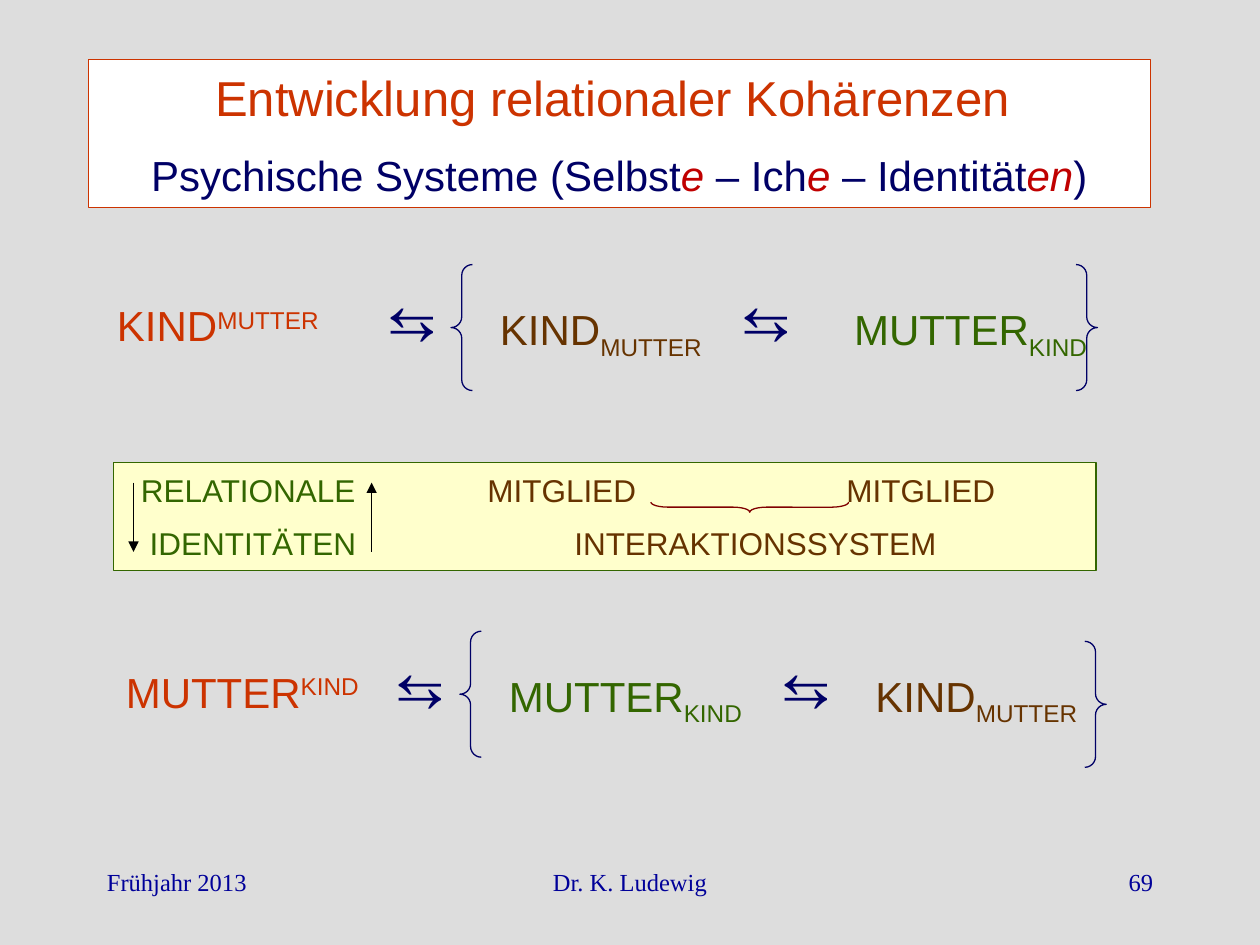
import pptx
import pptx.util
import pptx.dml.color
import pptx.enum.shapes
import pptx.enum.text
import pptx.oxml.ns
import lxml.etree

Inches, Pt = pptx.util.Inches, pptx.util.Pt
RGBColor = pptx.dml.color.RGBColor
SHAPE = pptx.enum.shapes.MSO_SHAPE
ALIGN = pptx.enum.text.PP_ALIGN
ANCHOR = pptx.enum.text.MSO_ANCHOR
qn = pptx.oxml.ns.qn

GREY = RGBColor(0xDD, 0xDD, 0xDD)
WHITE = RGBColor(0xFF, 0xFF, 0xFF)
CREAM = RGBColor(0xFF, 0xFF, 0xCC)
BLACK = RGBColor(0, 0, 0)
NAVY = RGBColor(0, 0, 0x66)
BLUE = RGBColor(0, 0, 0x99)
ORANGE = RGBColor(0xCC, 0x33, 0)
RED = RGBColor(0xC0, 0, 0)
MAROON = RGBColor(0x80, 0, 0)
BROWN = RGBColor(0x66, 0x33, 0)
GREEN = RGBColor(0x33, 0x66, 0)


def add_run(p, text, size, color, name="Arial", italic=False, base=0):
    """Append a formatted run; base is the raise in percent."""
    r = p.add_run()
    r.text = text
    for key, value in dict(size=Pt(size), name=name, italic=italic).items():
        setattr(r.font, key, value)
    r.font.color.rgb = color
    if base:
        r.font._element.set("baseline", str(base * 1000))


def set_tabs(p, stops):
    """Give a paragraph left tab stops, in inches."""
    tabs = lxml.etree.SubElement(p._p.get_or_add_pPr(), qn("a:tabLst"))
    for stop in stops:
        lxml.etree.SubElement(tabs, qn("a:tab"), pos=str(Inches(stop)), algn="l")


def add_text(s, left, top, width, height, anchor=ANCHOR.TOP):
    """Add a wrapping text box and return its first paragraph."""
    tf = s.shapes.add_textbox(*map(Inches, (left, top, width, height))).text_frame
    tf.word_wrap = True
    tf.vertical_anchor = anchor
    return tf.paragraphs[0]


def add_outline(s, kind, left, top, width, height, line, fill=None):
    """Add a thin-lined preset shape, filled or empty."""
    sp = s.shapes.add_shape(kind, *map(Inches, (left, top, width, height)))
    sp.shadow.inherit = False
    sp.line.color.rgb = line
    sp.line.width = Pt(0.75)
    if fill is None:
        sp.fill.background()
    else:
        sp.fill.solid()
        sp.fill.fore_color.rgb = fill
    return sp


def add_brace(s, kind, left, top, width, height, line, curl=0.5):
    """Add a brace with the given curl."""
    sp = add_outline(s, kind, left, top, width, height, line)
    sp.adjustments[0] = curl
    return sp


def add_arrow(s, x, start, end):
    """Add a vertical arrow from start to end."""
    c = s.shapes.add_connector(pptx.enum.shapes.MSO_CONNECTOR.STRAIGHT,
                               *map(Inches, (x, start, x, end)))
    c.line.color.rgb = BLACK
    c.line.width = Pt(0.75)
    lxml.etree.SubElement(c.line._get_or_add_ln(), qn("a:tailEnd"), type="triangle")
    lxml.etree.SubElement(c._element.spPr, qn("a:effectLst"))


def fill_box(sp, lines, align, gap):
    """Write lines of runs into a shape, with a gap between the lines."""
    tf = sp.text_frame
    tf.word_wrap = True
    tf.vertical_anchor = ANCHOR.MIDDLE
    for i, (runs, stops) in enumerate(lines):
        p = tf.add_paragraph() if i else tf.paragraphs[0]
        p.alignment = align
        p.space_before = Pt(gap if i else 0)
        if stops:
            set_tabs(p, stops)
        for run in runs:
            add_run(p, *run)


def build_title(s, left, top, width, height):
    """Draw the framed two-line title."""
    sp = add_outline(s, SHAPE.RECTANGLE, left, top, width, height, ORANGE, WHITE)
    subtitle = []
    for stem, ending in (("Psychische Systeme (Selbst", "e"), (" – Ich", "e"),
                         (" – Identität", "en")):
        subtitle += [(stem, 24, NAVY), (ending, 24, RED, "Arial", True)]
    subtitle.append((")", 24, NAVY))
    heading = [("Entwicklung relationaler Kohärenzen ", 28, ORANGE)]
    fill_box(sp, [(heading, None), (subtitle, None)], ALIGN.CENTER, 13)


def build_identities(s, left, top, width, height):
    """Draw the middle panel with its arrows and brace."""
    sp = add_outline(s, SHAPE.RECTANGLE, left, top, width, height, GREEN, CREAM)
    fill_box(sp, [
        ([("\tRELATIONALE", 18, GREEN), ("\tMITGLIED\tMITGLIED", 18, BROWN)],
         (0.12, 2.87, 5.72)),
        ([("\tIDENTITÄTEN", 18, GREEN), ("\tINTERAKTIONSSYSTEM", 18, BROWN)],
         (0.19, 3.56)),
    ], ALIGN.LEFT, 9)
    brace = add_brace(s, SHAPE.RIGHT_BRACE, left + 5.01, top - 0.43, 0.08, 1.57,
                      MAROON, 1.68)
    brace.rotation = 90
    upper, lower = top + 0.16, top + 0.71
    add_arrow(s, left + 2.05, lower, upper)
    add_arrow(s, left + 0.16, upper, lower)


def build_relation(s, left, top, first, second, stops, right_drop=0):
    """Draw one row: a person, and the braced pair of (name, colour) members."""
    label = add_text(s, left, top + 0.23, 2.13, 0.5, ANCHOR.MIDDLE)
    add_run(label, first[0], 24, ORANGE)
    add_run(label, second[0], 24, ORANGE, base=30)
    pair = add_text(s, left + 2.12, top + 0.15, 5.9, 0.63)
    set_tabs(pair, stops)
    for lead, (name, color), (other, _) in (("⇆\t", first, second),
                                            ("\t⇆\t", second, first)):
        add_run(pair, lead, 32, NAVY)
        add_run(pair, name, 24, color)
        add_run(pair, other, 24, color, base=-25)
    add_brace(s, SHAPE.LEFT_BRACE, left + 2.75, top, 0.17, 1, NAVY)
    add_brace(s, SHAPE.RIGHT_BRACE, left + 7.71, top + right_drop, 0.17, 1, NAVY)


def build_footer(s, left, top, width, height):
    """Draw date, author and page number along the footer."""
    side, middle = 2.08, 3.17
    for text, x, w, align in (
            ("Frühjahr 2013", left, side, ALIGN.LEFT),
            ("Dr. K. Ludewig", left + (width - middle) / 2, middle, ALIGN.CENTER),
            ("69", left + width - side, side, ALIGN.RIGHT)):
        p = add_text(s, x, top, w, height)
        p.alignment = align
        add_run(p, text, 14, BLUE, "Times New Roman")


def main():
    """Build and save the slide."""
    prs = pptx.Presentation()
    prs.slide_width, prs.slide_height = Inches(10), Inches(7.5)
    s = prs.slides.add_slide(prs.slide_layouts[6])
    s.background.fill.solid()
    s.background.fill.fore_color.rgb = GREY
    child, mother = ("KIND", BROWN), ("MUTTER", GREEN)
    build_footer(s, 0.75, 6.83, 8.5, 0.5)
    build_title(s, 0.7, 0.47, 8.43, 1.18)
    build_relation(s, 0.83, 2.1, child, mother, (0.92, 2.81, 3.73))
    build_identities(s, 0.9, 3.67, 7.8, 0.86)
    build_relation(s, 0.9, 5.01, mother, child, (0.92, 3.06, 3.83), 0.08)
    prs.save("out.pptx")


if __name__ == "__main__":
    main()
